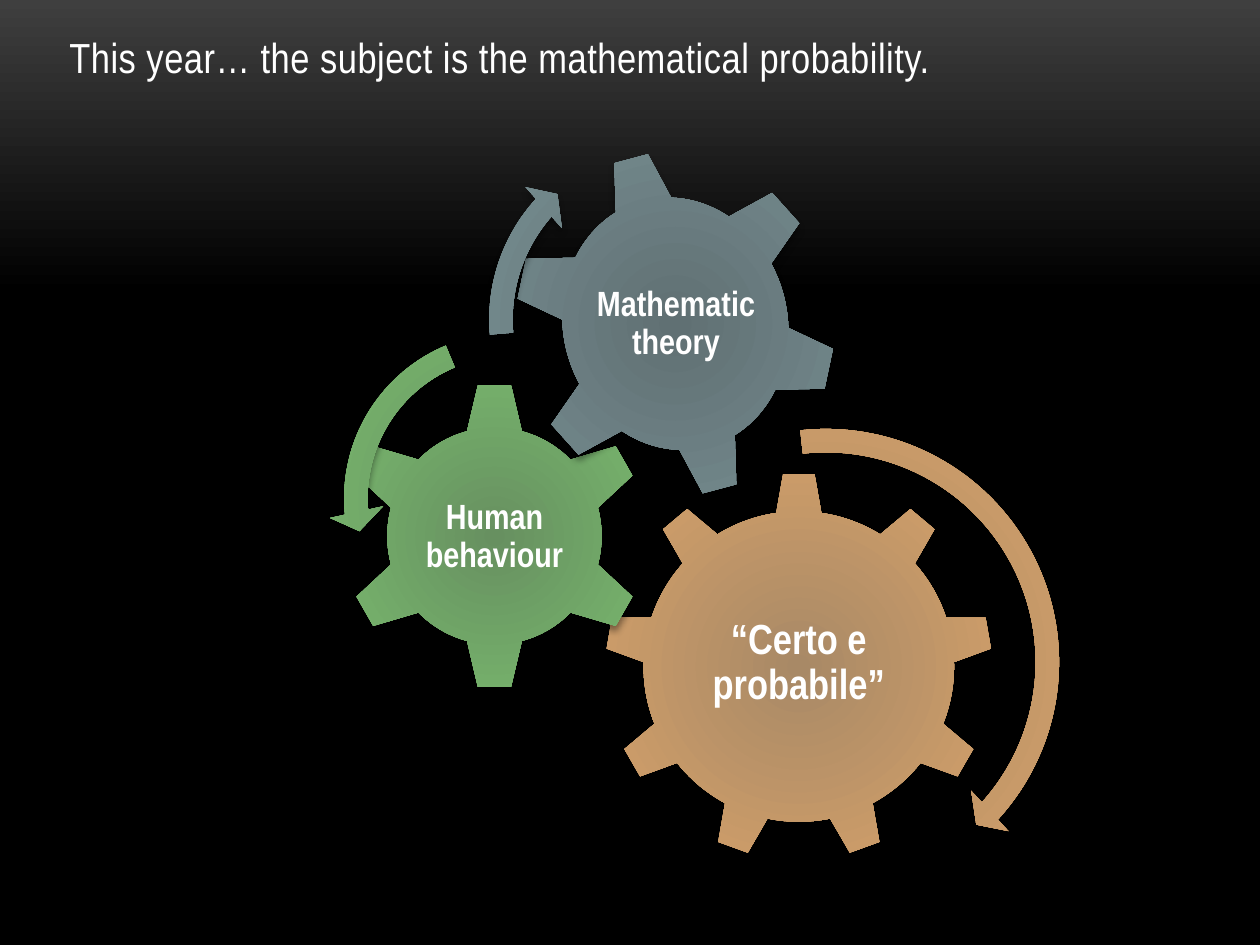
from lxml import etree
from pptx import Presentation
from pptx import util as u
from pptx.dml.color import RGBColor
from pptx.enum import shapes, text
from pptx.oxml import parse_xml
from pptx.oxml.ns import nsdecls, qn

FONT = "Arial Narrow"
COLORS = {
    "white": "FFFFFF", "black": "000000", "gray": "3F3F3F",
    "orange_in": "A88966", "orange": "D9A36A",
    "green_in": "679060", "green": "7ABC6F",
    "slate_in": "607073", "slate": "7B9397",
}
RADIAL = ('<a:path path="circle"><a:fillToRect l="100000" t="100000" '
          'r="100000" b="100000"/></a:path>')
DOWNWARD = '<a:lin ang="5400000" scaled="0"/>'


def set_gradient(fill, owner, stops, direction):
    fill.gradient()
    old = next(owner.iter(qn("a:gradFill")))
    gs = "".join(f'<a:gs pos="{pos * 1000}"><a:srgbClr val="{COLORS[name]}"/></a:gs>'
                 for pos, name in stops)
    new = parse_xml(f'<a:gradFill {nsdecls("a")} rotWithShape="1">'
                    f'<a:gsLst>{gs}</a:gsLst>{direction}</a:gradFill>')
    old.getparent().replace(old, new)


def add_part(group, kind, box, color):
    sp = group.shapes.add_shape(kind, *[u.Inches(v) for v in box])
    spPr = sp._element.spPr
    set_gradient(sp.fill, spPr, [(0, color + "_in"), (100, color)], RADIAL)
    sp.line.fill.background()
    sp.shadow.inherit = False
    shadow = etree.SubElement(spPr.find(qn("a:effectLst")), qn("a:outerShdw"),
                              blurRad="50800", dist="43000", dir="5400000",
                              rotWithShape="0")
    clr = etree.SubElement(shadow, qn("a:srgbClr"), val=COLORS["black"])
    etree.SubElement(clr, qn("a:alpha"), val="40000")
    return sp


prs = Presentation()
prs.slide_width, prs.slide_height = u.Inches(10), u.Inches(7.5)
s = prs.slides.add_slide(prs.slide_layouts[5])
set_gradient(s.background.fill, s._element,
             [(0, "gray"), (31, "black"), (100, "black")], DOWNWARD)

title = s.shapes.title
title.left, title.top = u.Inches(0.45), u.Inches(0)
title.width, title.height = u.Inches(9.1), u.Inches(0.75)
tf = title.text_frame
tf.word_wrap = True
tf.auto_size = text.MSO_AUTO_SIZE.NONE
tf.vertical_anchor = text.MSO_ANCHOR.BOTTOM
tf.margin_left = tf.margin_right = tf.margin_top = tf.margin_bottom = u.Inches(0.1)
p = tf.paragraphs[0]
p.alignment = text.PP_ALIGN.LEFT
p.space_before, p.space_after = u.Pt(0), u.Pt(6)
r = p.add_run()
r.text = "This year… the subject is the mathematical probability."
r.font.name, r.font.size = FONT, u.Pt(24)
r.font.color.rgb = RGBColor.from_string(COLORS["white"])
r._r.get_or_add_rPr().set("spc", "30")

gears = [
    (shapes.MSO_SHAPE.GEAR_9, (4.8, 3.75, 3.08, 3.08), 0, "orange",
     "“Certo e probabile”", (5.42, 4.47, 1.84, 1.59), 24),
    (shapes.MSO_SHAPE.GEAR_6, (2.71, 3.03, 2.43, 2.45), 0, "green",
     "Human behaviour", (3.32, 3.65, 1.21, 1.22), 20),
    (shapes.MSO_SHAPE.GEAR_6, (4.09, 1.18, 2.54, 2.78), 345, "slate",
     "Mathematic theory", (4.64, 1.81, 1.45, 1.53), 20),
]
arrows = [
    (shapes.MSO_SHAPE.CIRCULAR_ARROW, (4.58, 3.28, 3.95, 3.95), "orange",
     (0.047, 2.99, 25.347, 158.219, 0.055)),
    (shapes.MSO_SHAPE.LEFT_CIRCULAR_ARROW, (2.61, 2.52, 2.87, 2.87), "green",
     (0.065, 4.3, 104.891, 148.378, 0.075)),
    (shapes.MSO_SHAPE.CIRCULAR_ARROW, (3.76, 0.99, 3.09, 3.09), "slate",
     (0.06, 3.941, 133.138, 105.082, 0.07)),
]

group = s.shapes.add_group_shape()
for kind, box, angle, color, label, label_box, size in gears:
    sp = add_part(group, kind, box, color)
    sp.rotation = angle
    tb = group.shapes.add_textbox(*[u.Inches(v) for v in label_box])
    tf = tb.text_frame
    tf.word_wrap = True
    tf.vertical_anchor = text.MSO_ANCHOR.MIDDLE
    tf.margin_left = tf.margin_right = tf.margin_top = tf.margin_bottom = u.Inches(0.03)
    p = tf.paragraphs[0]
    p.alignment = text.PP_ALIGN.CENTER
    p.line_spacing = 0.9
    r = p.add_run()
    r.text = label
    r.font.name, r.font.size, r.font.bold = FONT, u.Pt(size), True
    r.font.color.rgb = RGBColor.from_string(COLORS["white"])

for kind, box, color, adjustments in arrows:
    sp = add_part(group, kind, box, color)
    for i, value in enumerate(adjustments):
        sp.adjustments[i] = value

prs.save("out.pptx")
